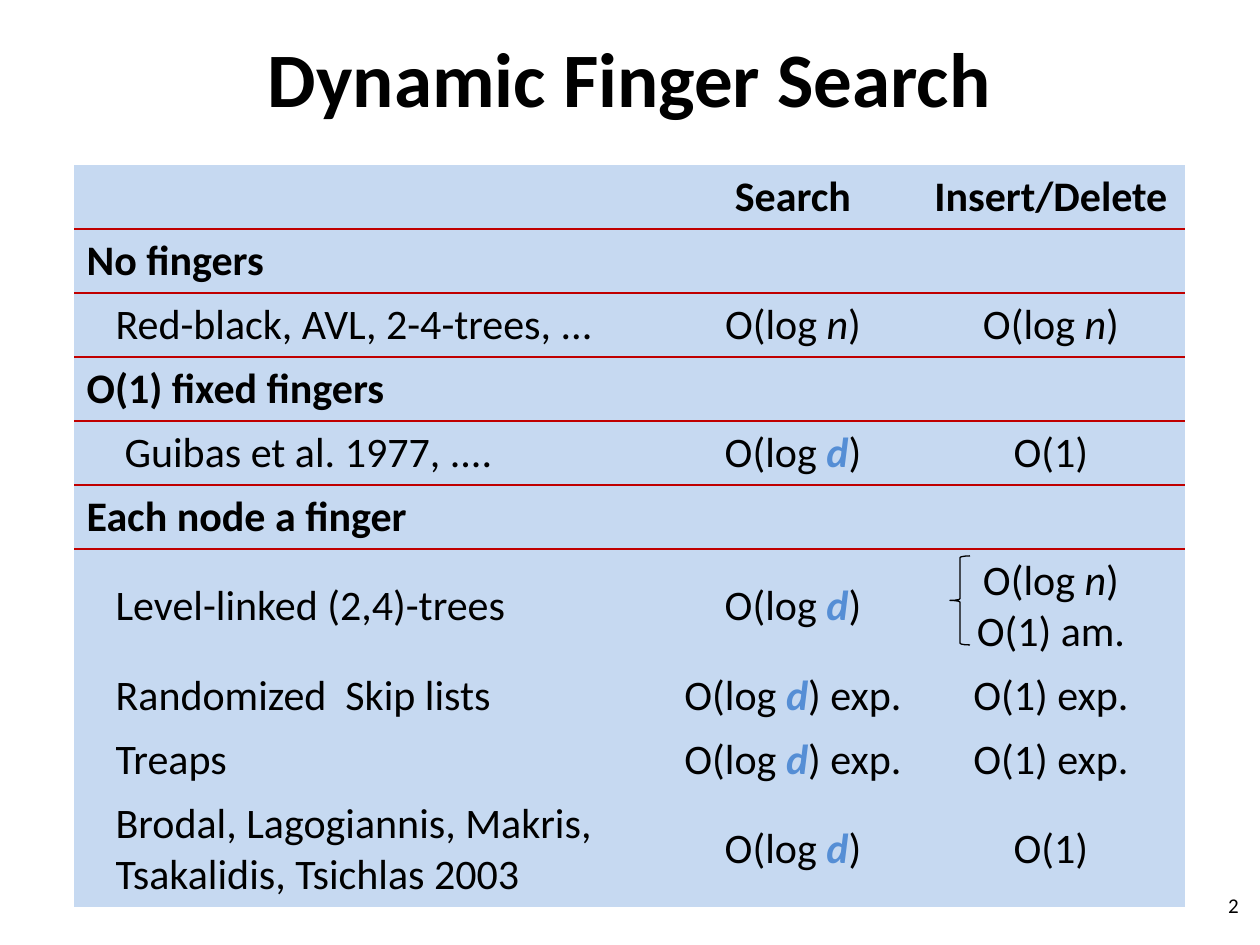
from dataclasses import dataclass

from lxml import etree
from pptx import Presentation
from pptx.dml.color import RGBColor
from pptx.enum.shapes import MSO_SHAPE
from pptx.enum.text import MSO_ANCHOR, PP_ALIGN
from pptx.oxml.ns import qn
from pptx.slide import Slide
from pptx.table import _Cell
from pptx.util import Emu, Pt

LEFT, CENTER, RIGHT = PP_ALIGN.LEFT, PP_ALIGN.CENTER, PP_ALIGN.RIGHT
MIDDLE = MSO_ANCHOR.MIDDLE
LEFT_BRACE = MSO_SHAPE.LEFT_BRACE
PX_PER_INCH = 126
NO_TABLE_STYLE = "{2D5ABB26-0587-4C30-8999-92F81FD0307C}"


@dataclass(frozen=True)
class Theme:
    font: str = "Calibri"
    text: str = "000000"
    accent: str = "558ED5"
    cell: str = "C6D9F1"
    rule: str = "C00000"
    title_size: int = 44
    table_size: int = 24
    number_size: int = 12
    rule_width: float = 1
    brace_width: float = 0.75


THEME = Theme()


@dataclass(frozen=True)
class Run:
    text: str
    bold: bool = False
    italic: bool = False
    color: str = THEME.text


@dataclass(frozen=True)
class Box:
    left: int
    top: int
    width: int
    height: int


Line = tuple[Run, ...]


@dataclass(frozen=True)
class Row:
    label: tuple[Line, ...] = ()
    search: tuple[Line, ...] = ()
    update: tuple[Line, ...] = ()
    indent: int = 0
    ruled: bool = False


def px(value: int) -> Emu:
    return Emu(round(value * 914400 / PX_PER_INCH))


def plain(*texts: str) -> tuple[Line, ...]:
    return tuple((Run(text),) for text in texts)


def strong(text: str) -> tuple[Line, ...]:
    return ((Run(text, bold=True),),)


def log_of(variable: Run, suffix: str = "") -> tuple[Line, ...]:
    return ((Run("O(log "), variable, Run(")" + suffix)),)


SIZE_N = Run("n", italic=True)
DISTANCE_D = Run("d", bold=True, italic=True, color=THEME.accent)
LOG_N = log_of(SIZE_N)
LOG_D = log_of(DISTANCE_D)
LOG_D_EXPECTED = log_of(DISTANCE_D, " exp.")
INDENT = 29

ROWS = (
    Row((), strong("Search"), strong("Insert/Delete"), ruled=True),
    Row(strong("No fingers")),
    Row(plain("Red-black, AVL, 2-4-trees, ..."), LOG_N, LOG_N, INDENT, True),
    Row(strong("O(1) fixed fingers")),
    Row(plain("Guibas et al. 1977, ...."), LOG_D, plain("O(1)"), 38, True),
    Row(strong("Each node a finger")),
    Row(plain("Level-linked (2,4)-trees"), LOG_D, LOG_N + plain("O(1) am."), INDENT),
    Row(plain("Randomized  Skip lists"), LOG_D_EXPECTED, plain("O(1) exp."), INDENT),
    Row(plain("Treaps"), LOG_D_EXPECTED, plain("O(1) exp."), INDENT),
    Row(
        plain("Brodal, Lagogiannis, Makris,", "Tsakalidis, Tsichlas 2003"),
        LOG_D,
        plain("O(1)"),
        INDENT,
    ),
)
COLUMN_WIDTHS = (595, 248, 268)
ROW_HEIGHTS = {1: 64, 2: 115}


def write_lines(text_frame, lines: tuple[Line, ...], size: int, align: PP_ALIGN, indent: int = 0) -> None:
    for index, line in enumerate(lines):
        paragraph = text_frame.add_paragraph() if index else text_frame.paragraphs[0]
        paragraph.alignment = align
        if indent:
            paragraph._p.get_or_add_pPr().set("marL", str(px(indent)))
        for part in line:
            run = paragraph.add_run()
            run.text = part.text
            run.font.name = THEME.font
            run.font.size = Pt(size)
            run.font.bold = part.bold
            run.font.italic = part.italic
            run.font.color.rgb = RGBColor.from_string(part.color)


def add_text(slide: Slide, box: Box, lines: tuple[Line, ...], size: int, align: PP_ALIGN) -> None:
    shape = slide.shapes.add_textbox(px(box.left), px(box.top), px(box.width), px(box.height))
    shape.text_frame.word_wrap = True
    shape.text_frame.vertical_anchor = MIDDLE
    write_lines(shape.text_frame, lines, size, align)


def add_rule(cell: _Cell, side: str) -> None:
    line = etree.Element(qn(f"a:{side}"), w=str(Pt(THEME.rule_width)))
    fill = etree.SubElement(line, qn("a:solidFill"))
    etree.SubElement(fill, qn("a:srgbClr"), val=THEME.rule)
    cell._tc.get_or_add_tcPr().insert(0, line)


def row_height(row: Row) -> int:
    return ROW_HEIGHTS[max(1, len(row.label), len(row.search), len(row.update))]


def add_search_table(slide: Slide, left: int, top: int) -> None:
    heights = [row_height(row) for row in ROWS]
    frame = slide.shapes.add_table(
        len(ROWS), len(COLUMN_WIDTHS), px(left), px(top), px(sum(COLUMN_WIDTHS)), px(sum(heights))
    )
    table = frame.table
    table.first_row = False
    table.horz_banding = False
    table._tbl.tblPr.find(qn("a:tableStyleId")).text = NO_TABLE_STYLE
    for column, width in zip(table.columns, COLUMN_WIDTHS):
        column.width = px(width)
    for index, row in enumerate(ROWS):
        table.rows[index].height = px(heights[index])
        for position, lines in enumerate((row.label, row.search, row.update)):
            cell = table.cell(index, position)
            cell.vertical_anchor = MIDDLE
            cell.fill.solid()
            cell.fill.fore_color.rgb = RGBColor.from_string(THEME.cell)
            align, indent = (CENTER, 0) if position else (LEFT, row.indent)
            write_lines(cell.text_frame, lines, THEME.table_size, align, indent)
            if row.ruled:
                add_rule(cell, "lnB")
            if index and ROWS[index - 1].ruled:
                add_rule(cell, "lnT")


def add_brace(slide: Slide, box: Box) -> None:
    shape = slide.shapes.add_shape(LEFT_BRACE, px(box.left), px(box.top), px(box.width), px(box.height))
    shape.shadow.inherit = False
    shape.fill.background()
    shape.line.color.rgb = RGBColor.from_string(THEME.text)
    shape.line.width = Pt(THEME.brace_width)


def main() -> None:
    presentation = Presentation()
    presentation.slide_width = px(1260)
    presentation.slide_height = px(945)
    slide = presentation.slides.add_slide(presentation.slide_layouts[6])
    add_text(slide, Box(63, -2, 1134, 157), strong("Dynamic Finger Search"), THEME.title_size, CENTER)
    add_text(slide, Box(958, 880, 293, 50), plain("2"), THEME.number_size, RIGHT)
    add_search_table(slide, 74, 165)
    add_brace(slide, Box(950, 556, 20, 89))
    presentation.save("out.pptx")


if __name__ == "__main__":
    main()
